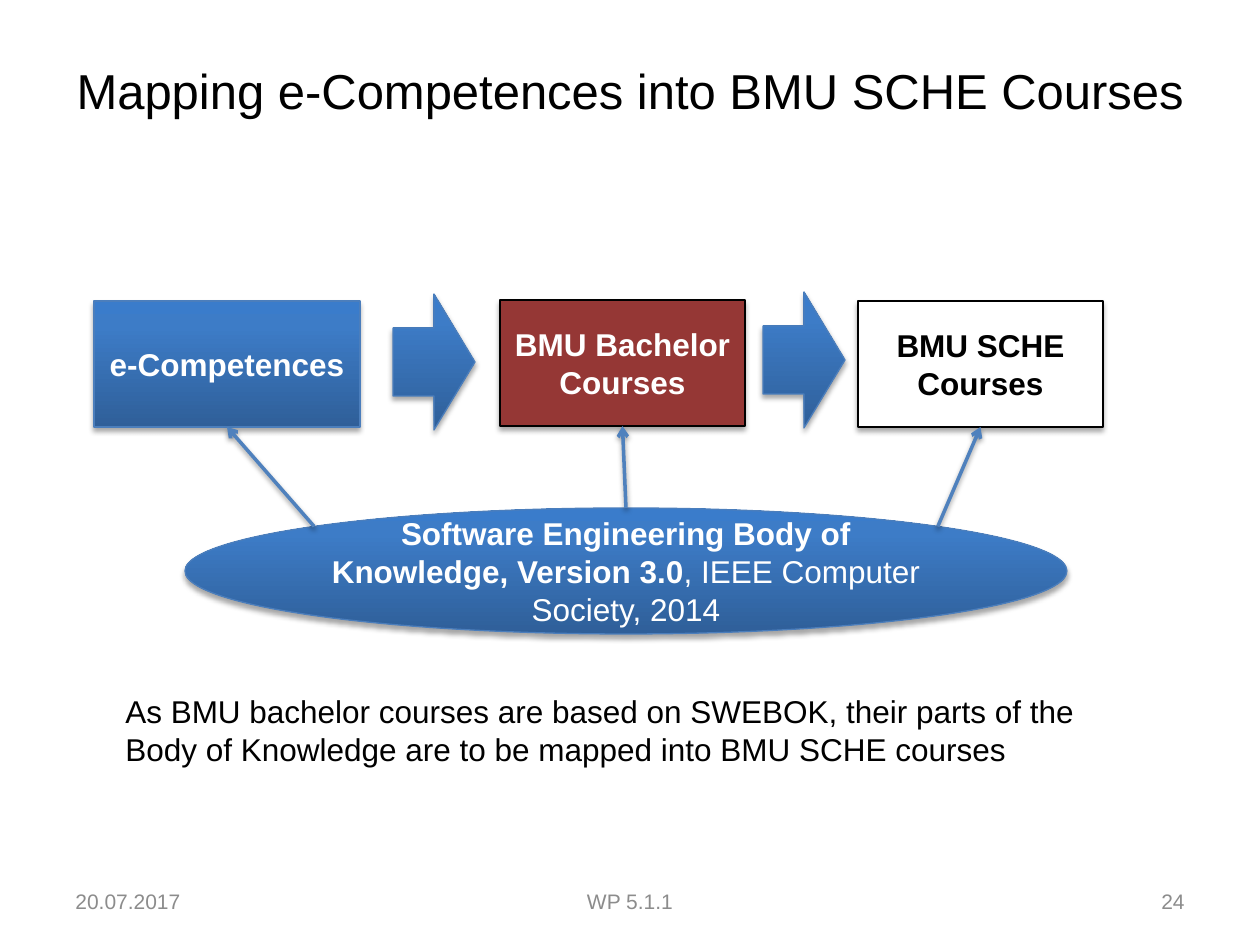
from math import cos, pi

from lxml.etree import SubElement
from pptx import Presentation
from pptx.dml.color import RGBColor
from pptx.enum.shapes import MSO_CONNECTOR as Connector, MSO_SHAPE as Shape
from pptx.enum.text import MSO_ANCHOR as Anchor, PP_ALIGN as Align
from pptx.oxml.ns import qn
from pptx.util import Emu, Pt

PX_PER_INCH = 126
GRADIENT = ((0, "2F5F99"), (80, "3D7CC7"), (100, "3A7CCB"))
BLUE_EDGE = "4B7EBC"
ARROW_BLUE = "4F81BD"
RED = "953735"
BLACK = "000000"
WHITE = "FFFFFF"
GREY = "8C8C8C"


def px(length):
    return Emu(round(length * 914400 / PX_PER_INCH))


def color(value):
    return RGBColor.from_string(value)


def write(shape, spans, size, ink, align=Align.CENTER, anchor=Anchor.MIDDLE):
    frame = shape.text_frame
    frame.word_wrap = True
    frame.vertical_anchor = anchor
    para = frame.paragraphs[0]
    para.alignment = align
    for text, bold in spans:
        span = para.add_run()
        span.text = text
        span.font.name = "Arial"
        span.font.size = Pt(size)
        span.font.bold = bold
        span.font.color.rgb = color(ink)


def add_text(page, box, text, size, ink, align, anchor=Anchor.MIDDLE):
    shape = page.shapes.add_textbox(*map(px, box))
    write(shape, [(text, False)], size, ink, align, anchor)
    return shape


def add_shadow(shape, distance, opacity):
    effects = SubElement(shape.element.spPr, qn("a:effectLst"))
    shadow = SubElement(effects, qn("a:outerShdw"), blurRad=str(Pt(3.1)),
                        dist=str(Pt(distance)), dir="5400000", rotWithShape="0")
    tint = SubElement(shadow, qn("a:srgbClr"), val=BLACK)
    SubElement(tint, qn("a:alpha"), val=str(opacity * 1000))


def fill_gradient(shape):
    shape.fill.gradient()
    shape.fill.gradient_angle = 90
    stops = shape.element.spPr.find(qn("a:gradFill")).find(qn("a:gsLst"))
    for stop in list(stops):
        stops.remove(stop)
    for position, value in GRADIENT:
        stop = SubElement(stops, qn("a:gs"), pos=str(position * 1000))
        SubElement(stop, qn("a:srgbClr"), val=value)


def add_block(page, kind, box, spans=(), fill=None, edge=BLUE_EDGE, ink=WHITE):
    shape = page.shapes.add_shape(kind, *map(px, box))
    if fill:
        shape.fill.solid()
        shape.fill.fore_color.rgb = color(fill)
    else:
        fill_gradient(shape)
    shape.line.color.rgb = color(edge)
    shape.line.width = Pt(0.75)
    add_shadow(shape, 1.8, 35)
    if spans:
        write(shape, spans, 18, ink)
    return shape


def add_arrow(page, start, end):
    arrow = page.shapes.add_connector(Connector.STRAIGHT, *map(px, start + end))
    arrow.line.color.rgb = color(ARROW_BLUE)
    arrow.line.width = Pt(2)
    SubElement(arrow.line._get_or_add_ln(), qn("a:tailEnd"), type="arrow")
    add_shadow(arrow, 1.6, 38)
    return arrow


def add_title(page, box):
    title = add_text(page, box, "Mapping e-Competences into BMU SCHE Courses",
                     28, BLACK, Align.CENTER)
    title.text_frame.margin_bottom = px(60)


def add_mapping(page, box):
    left, top, width, height = box
    row = 126
    stages = (
        ((left, top + 9, 266, row), "e-Competences", None, BLUE_EDGE, WHITE),
        ((left + 406, top + 8, 245, row), "BMU Bachelor Courses", RED, BLACK, WHITE),
        ((left + 764, top + 9, 245, row), "BMU SCHE Courses", WHITE, BLACK, BLACK),
    )
    targets = [add_block(page, Shape.RECTANGLE, place, [(text, True)], fill, edge, ink)
               for place, text, fill, edge, ink in stages]
    for x, y in ((299, 2), (669, 0)):
        add_block(page, Shape.RIGHT_ARROW, (left + x, top + y, 82, 136))

    oval_width = 882
    oval_left, oval_top = left + 91, top + height - row
    source = add_block(
        page, Shape.OVAL, (oval_left, oval_top, oval_width, row),
        [("Software Engineering Body of Knowledge, Version 3.0", True),
         (", IEEE Computer Society, 2014", False)])

    center = oval_left + oval_width / 2
    reach = cos(pi / 4)
    for side, (place, *_), target in zip((-1, 0, 1), stages, targets):
        drop = (1 - reach) * row / 2 if side else 0
        start = (center + side * reach * oval_width / 2, oval_top + drop)
        end = (place[0] + place[2] / 2, place[1] + row)
        arrow = add_arrow(page, start, end)
        if side == 0:
            arrow.begin_connect(source, 0)
        arrow.end_connect(target, 2)


def add_note(page, box):
    add_text(page, box,
             "As BMU bachelor courses are based on SWEBOK, their parts of the "
             "Body of Knowledge are to be mapped into BMU SCHE courses",
             18, BLACK, Align.LEFT, Anchor.TOP)


def add_footer(page, box):
    left, top, width, height = box
    side, middle = 294, 399
    parts = (
        (left, side, "20.07.2017", Align.LEFT),
        (left + (width - middle) / 2, middle, "WP 5.1.1", Align.CENTER),
        (left + width - side, side, "24", Align.RIGHT),
    )
    for x, part_width, text, align in parts:
        add_text(page, (x, top, part_width, height), text, 12, GREY, align)


def main():
    deck = Presentation()
    deck.slide_width, deck.slide_height = px(1260), px(945)
    page = deck.slides.add_slide(deck.slide_layouts[6])
    add_title(page, (63, 38, 1134, 157))
    add_mapping(page, (94, 292, 1009, 342))
    add_note(page, (113, 686, 982, 90))
    add_footer(page, (63, 876, 1134, 50))
    deck.save("out.pptx")


if __name__ == "__main__":
    main()
